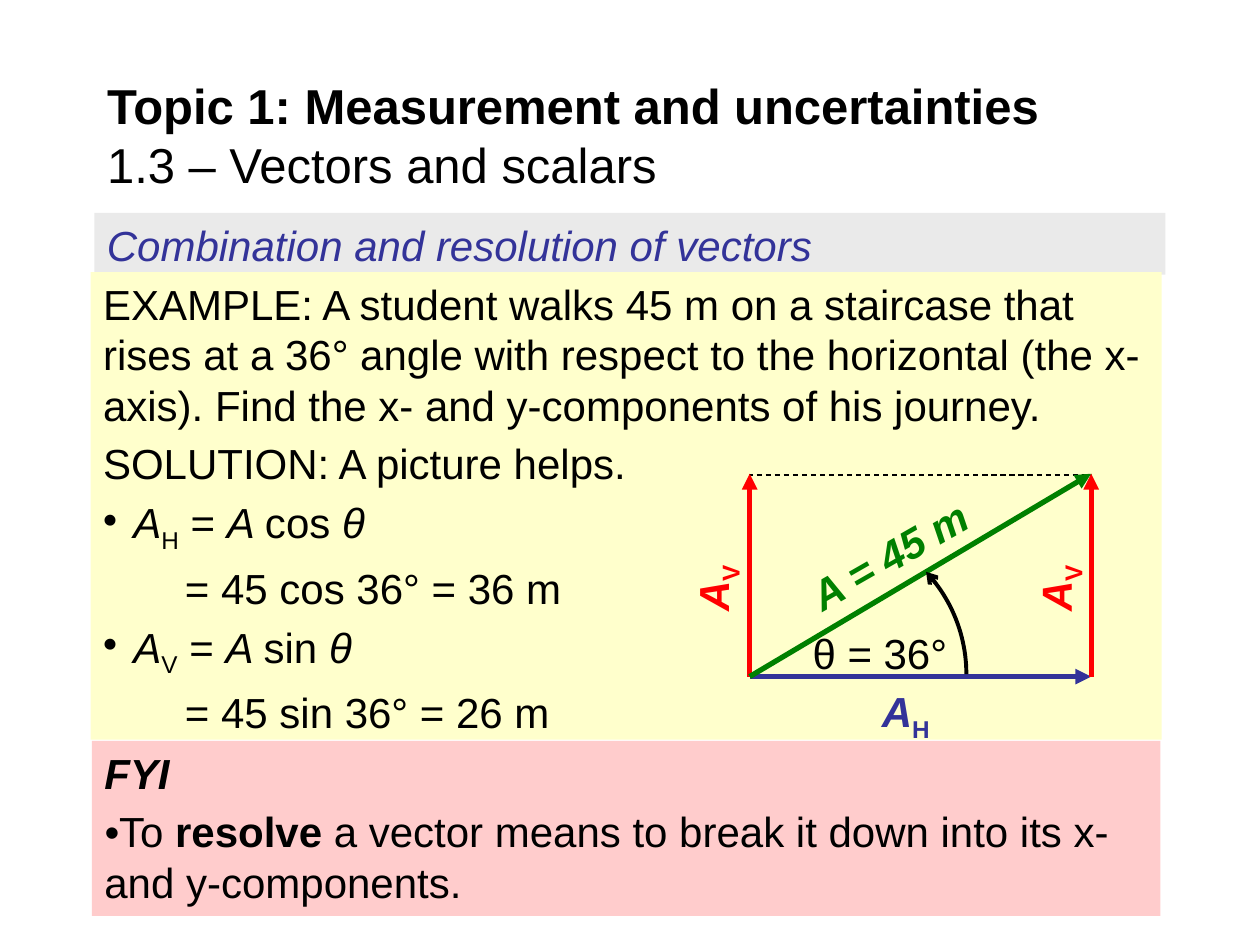
from math import cos, sin, radians
from pptx import Presentation, util as u
from pptx.dml.color import RGBColor
from pptx.enum import dml, shapes, text
from pptx.oxml.ns import qn
from lxml import etree

THEME = dict(font="Arial", head=28, body=24, rule=3, arc=2.25, dash=0.75,
             ink="000000", blue="333399", red="FF0000", green="008000",
             gray="EAEAEA", cream="FFFFCC", pink="FFCCCC")

TITLE = [("Topic 1: Measurement and uncertainties", "b"),
         ("1.3 – Vectors and scalars", "")]
TOPIC = [("", [("Combination and resolution of vectors", "i")])]
WORK = [
    ("", [("EXAMPLE: A student walks 45 m on a staircase that rises at a 36° angle "
           "with respect to the horizontal (the x-axis). Find the x- and "
           "y-components of his journey.", "")]),
    ("", [("SOLUTION: A picture helps.", "")]),
    ("bullet", [("A", "i"), ("H", "s"), (" = ", ""), ("A ", "i"), ("cos ", ""), ("θ", "i")]),
    ("step", [("= 45 cos 36° = 36 m", "")]),
    ("bullet", [("A", "i"), ("V", "s"), (" = ", ""), ("A ", "i"), ("sin ", ""), ("θ", "i")]),
    ("step", [("= 45 sin 36° = 26 m", "")]),
]
FYI = [("", [("FYI", "bi")]),
       ("", [("•", "i"), ("To ", ""), ("resolve", "b"),
             (" a vector means to break it down into its x- and y-components.", "")])]
PANELS = [(TOPIC, (0.75, 1.69, 8.5, 0.49), "gray", "blue"),
          (WORK, (0.72, 2.16, 8.5, 3.71), "cream", "ink"),
          (FYI, (0.73, 5.88, 8.48, 1.39), "pink", "ink")]

LEFT, RIGHT, TOP, BASE = 5.95, 8.66, 3.76, 5.37
ARROWS = [((LEFT, BASE), (RIGHT, BASE), "blue"),
          ((LEFT, BASE), (LEFT, TOP), "red"),
          ((LEFT, BASE), (RIGHT, TOP), "green"),
          ((RIGHT, BASE), (RIGHT, TOP), "red")]
RISE = [("A", "bi"), ("V", "bs")]
LABELS = [([("A", "bi"), ("H", "bs")], (6.9, 5.4, 0.88, 0.33), 0, "blue"),
          (RISE, (LEFT - 0.73, 4.37, 0.77, 0.39), 270, "red"),
          (RISE, (RIGHT - 0.72, 4.37, 0.77, 0.39), 270, "red"),
          ([("A = 45 m", "bi")], (6.22, 4.08, 2.07, 0.33), 330.1, "green"),
          ([("θ = 36°", "")], (6.35, 4.98, 1.59, 0.43), 0, "ink")]
ARC = dict(x=6.48, y=5.35, r=1.19, span=43, parts=24)


def tone(name):
    return RGBColor.from_string(THEME[name])


def inches(box):
    return [u.Inches(n) for n in box]


def write(para, runs, color, size="body"):
    for words, style in runs:
        run = para.add_run()
        run.text = words
        font = run.font
        font.name, font.size = THEME["font"], u.Pt(THEME[size])
        font.bold, font.italic = "b" in style, "i" in style
        font.color.rgb = tone(color)
        if "s" in style:
            font._element.set("baseline", "-25000")


def indent(para, kind):
    props = para._p.get_or_add_pPr()
    if kind == "bullet":
        props.set("marL", str(u.Inches(0.24)))
        props.set("indent", str(-u.Inches(0.24)))
        etree.SubElement(props, qn("a:buChar")).set("char", "•")
    elif kind == "step":
        props.set("marL", str(u.Inches(0.65)))


def fill_text(frame, paras, color, lead=None):
    frame.word_wrap = True
    frame.vertical_anchor = text.MSO_ANCHOR.TOP
    for n, (kind, runs) in enumerate(paras):
        para = frame.add_paragraph() if n else frame.paragraphs[0]
        para.alignment = text.PP_ALIGN.LEFT
        para.space_before = u.Pt(THEME["body"] * 0.2)
        if lead:
            para.line_spacing = lead
        indent(para, kind)
        write(para, runs, color)


def stroke(shape, color, width, end=None, kind="triangle"):
    shape.line.color.rgb = tone(color)
    shape.line.width = u.Pt(THEME[width])
    if end:
        etree.SubElement(shape.line._get_or_add_ln(), qn("a:" + end)).set("type", kind)


def add_rect(slide, box):
    rect = slide.shapes.add_shape(shapes.MSO_SHAPE.RECTANGLE, *inches(box))
    rect.shadow.inherit = False
    return rect


def add_title(slide):
    title = slide.shapes.title
    title.left, title.top, title.width, title.height = inches((0.75, 0.58, 8.5, 0.98))
    title.text_frame.vertical_anchor = text.MSO_ANCHOR.MIDDLE
    para = title.text_frame.paragraphs[0]
    para.alignment = text.PP_ALIGN.LEFT
    for n, run in enumerate(TITLE):
        if n:
            para.add_line_break()
        write(para, [run], "ink", "head")


def add_panel(slide, paras, box, fill, color):
    rect = add_rect(slide, box)
    rect.fill.solid()
    rect.fill.fore_color.rgb = tone(fill)
    rect.line.fill.background()
    fill_text(rect.text_frame, paras, color)


def add_arrow(slide, start, end, color):
    line = slide.shapes.add_connector(shapes.MSO_CONNECTOR.STRAIGHT, *inches(start + end))
    stroke(line, color, "rule", "tailEnd")
    etree.SubElement(line._element.spPr, qn("a:effectLst"))


def add_arc(slide):
    turns = [radians(ARC["span"] * (1 - n / ARC["parts"])) for n in range(ARC["parts"] + 1)]
    points = [(u.Inches(ARC["x"] + ARC["r"] * cos(t)),
               u.Inches(ARC["y"] - ARC["r"] * sin(t))) for t in turns]
    pen = slide.shapes.build_freeform(*points[0])
    pen.add_line_segments(points[1:], close=False)
    arc = pen.convert_to_shape()
    arc.shadow.inherit = False
    arc.fill.background()
    stroke(arc, "ink", "arc", "headEnd", "arrow")


def add_diagram(slide):
    frame = add_rect(slide, (LEFT, TOP + 0.01, RIGHT - LEFT, BASE - TOP - 0.01))
    frame.fill.background()
    stroke(frame, "ink", "dash")
    frame.line.dash_style = dml.MSO_LINE.DASH
    for arrow in ARROWS:
        add_arrow(slide, *arrow)
    for runs, box, turn, color in LABELS:
        label = slide.shapes.add_textbox(*inches(box))
        label.rotation = turn
        fill_text(label.text_frame, [("", runs)], color, 0.9)
    add_arc(slide)


def main():
    deck = Presentation()
    deck.slide_width, deck.slide_height = inches((10, 7.5))
    slide = deck.slides.add_slide(deck.slide_layouts[5])
    add_title(slide)
    for panel in PANELS:
        add_panel(slide, *panel)
    add_diagram(slide)
    deck.save("out.pptx")


if __name__ == "__main__":
    main()
